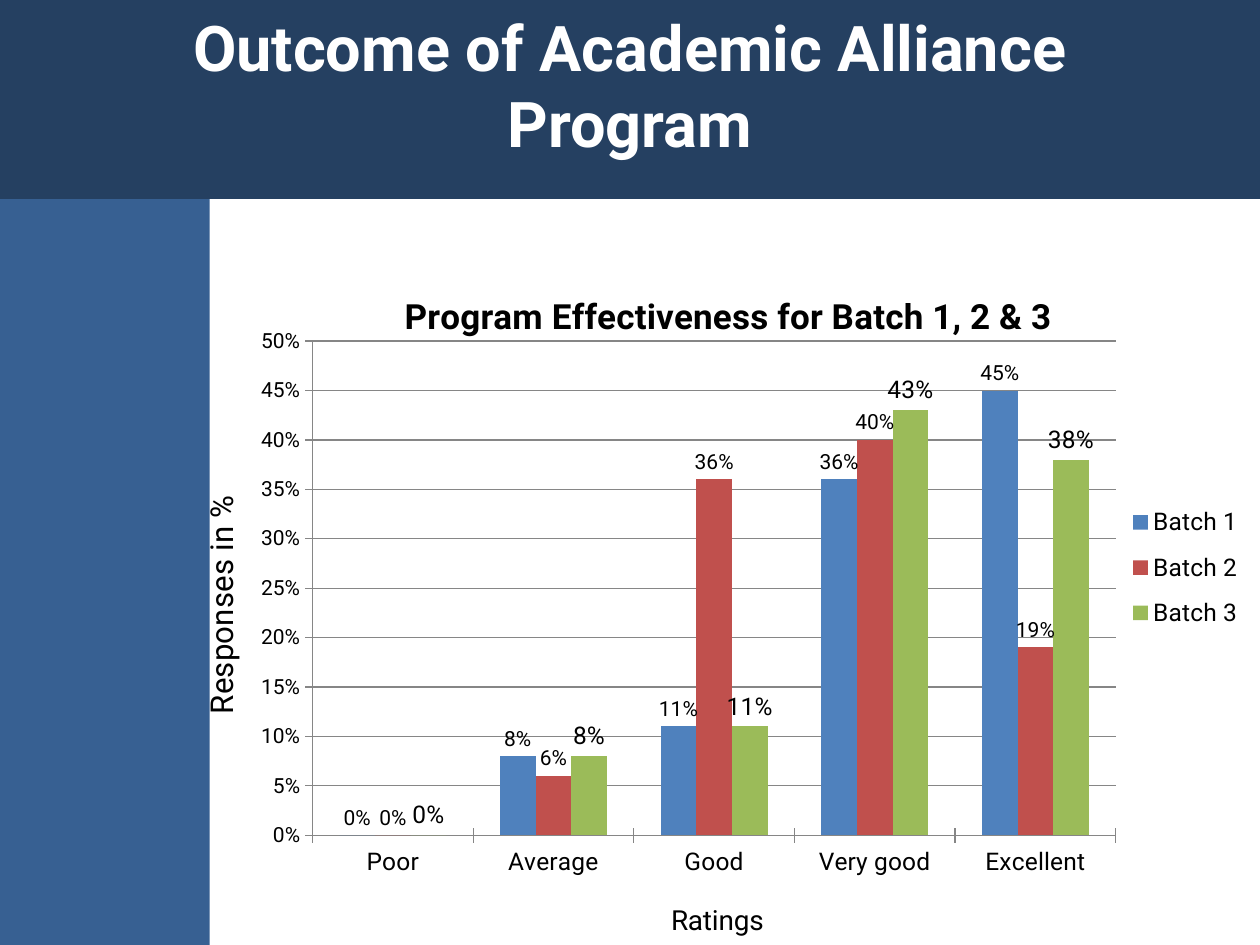
from dataclasses import dataclass

from lxml import etree
from pptx import Presentation
from pptx.chart.data import CategoryChartData
from pptx.dml.color import RGBColor
from pptx.enum.chart import (XL_CHART_TYPE, XL_LABEL_POSITION,
                             XL_LEGEND_POSITION, XL_TICK_MARK)
from pptx.enum.shapes import MSO_SHAPE
from pptx.enum.text import MSO_ANCHOR, MSO_AUTO_SIZE, PP_ALIGN
from pptx.oxml.ns import qn
from pptx.util import Cm, Pt

COLUMNS = XL_CHART_TYPE.COLUMN_CLUSTERED
OUTSIDE_END = XL_LABEL_POSITION.OUTSIDE_END
LEGEND_RIGHT = XL_LEGEND_POSITION.RIGHT
CROSS = XL_TICK_MARK.CROSS
RECT = MSO_SHAPE.RECTANGLE

NAVY = RGBColor(0x25, 0x40, 0x61)
STEEL = RGBColor(0x37, 0x60, 0x92)
BLUE = RGBColor(0x4F, 0x81, 0xBD)
RED = RGBColor(0xC0, 0x50, 0x4D)
GREEN = RGBColor(0x9B, 0xBB, 0x59)
GREY = RGBColor(0x86, 0x86, 0x86)
BLACK = RGBColor(0, 0, 0)
WHITE = RGBColor(0xFF, 0xFF, 0xFF)
FONT = "Roboto"
PERCENT = "0%"


@dataclass
class Band:
    left: float
    top: float
    width: float
    height: float
    color: RGBColor


@dataclass
class Batch:
    name: str
    values: tuple
    color: RGBColor
    label_size: int


BANDS = [Band(0, 4.01, 4.23, 15.04, STEEL), Band(0, 0, 25.4, 4.01, NAVY)]
RATINGS = ["Poor", "Average", "Good", "Very good", "Excellent"]
BATCHES = [
    Batch("Batch 1", (0, 0.08, 0.11, 0.36, 0.45), BLUE, 12),
    Batch("Batch 2", (0, 0.06, 0.36, 0.40, 0.19), RED, 12),
    Batch("Batch 3", (0, 0.08, 0.11, 0.43, 0.38), GREEN, 14),
]


def format_font(font, size: int, color: RGBColor = BLACK, bold: bool = False) -> None:
    font.name, font.size, font.bold = FONT, Pt(size), bold
    font.color.rgb = color


def write(tf, text: str, *, size: int, color: RGBColor = BLACK,
          bold: bool = False) -> None:
    p = tf.paragraphs[0]
    p.alignment = PP_ALIGN.CENTER
    r = p.add_run()
    r.text = text
    format_font(r.font, size, color, bold)


def place(element, index: int, **fractions: float) -> None:
    """Set a manual layout, in fractions of the chart, at a child index."""
    for old in element.findall(qn("c:layout")):
        element.remove(old)
    layout = etree.Element(qn("c:layout"))
    manual = etree.SubElement(layout, qn("c:manualLayout"))
    if "w" in fractions and element.tag == qn("c:plotArea"):
        etree.SubElement(manual, qn("c:layoutTarget"), val="inner")
    for key in ("x", "y"):
        etree.SubElement(manual, qn(f"c:{key}Mode"), val="edge")
    for key, value in fractions.items():
        etree.SubElement(manual, qn(f"c:{key}"), val=str(value))
    element.insert(index, layout)


def add_band(s, band: Band, index: int) -> None:
    sp = s.shapes.add_shape(RECT, Cm(band.left), Cm(band.top),
                            Cm(band.width), Cm(band.height))
    sp.shadow.inherit = False
    sp.fill.solid()
    sp.fill.fore_color.rgb = band.color
    sp.line.fill.background()
    s.shapes._spTree.insert(2 + index, sp._element)  # behind the title


def add_title(s, text: str) -> None:
    sp = s.shapes.title
    sp.left, sp.top, sp.width, sp.height = Cm(1.27), Cm(0.64), Cm(22.86), Cm(2.11)
    tf = sp.text_frame
    tf.word_wrap = True
    tf.auto_size = MSO_AUTO_SIZE.NONE
    tf.vertical_anchor = MSO_ANCHOR.MIDDLE
    write(tf, text, size=36, color=WHITE, bold=True)


def format_axis(axis, title: str, title_size: int, size: int,
                x: float, y: float) -> None:
    write(axis.axis_title.text_frame, title, size=title_size)
    place(axis.axis_title._element, 1, x=x, y=y)
    format_font(axis.tick_labels.font, size)
    axis.major_tick_mark = CROSS
    axis.minor_tick_mark = XL_TICK_MARK.NONE
    axis.format.line.color.rgb = GREY


def add_chart(s) -> None:
    data = CategoryChartData(number_format=PERCENT)
    data.categories = RATINGS
    for batch in BATCHES:
        data.add_series(batch.name, batch.values)
    chart = s.shapes.add_chart(COLUMNS, Cm(3.71), Cm(5.08),
                               Cm(21.59), Cm(13.97), data).chart
    format_font(chart.font, 10)

    # Title and legend
    chart.has_title = True
    write(chart.chart_title.text_frame, "Program Effectiveness for Batch 1, 2 & 3",
          size=20, bold=True)
    place(chart.chart_title._element, 1, x=0.2, y=0.05)
    chart.has_legend = True
    chart.legend.position = LEGEND_RIGHT
    chart.legend.include_in_layout = False
    format_font(chart.legend.font, 14)
    place(chart.legend._element, 1, x=0.87, y=0.35, w=0.13, h=0.22)

    # Axes
    format_axis(chart.category_axis, "Ratings", 16, 14, 0.45, 0.94)
    axis = chart.value_axis
    format_axis(axis, "Responses in %", 18, 12, 0.01, 0.35)
    axis.minimum_scale, axis.maximum_scale, axis.major_unit = 0, 0.5, 0.05
    axis.tick_labels.number_format = PERCENT
    axis.tick_labels.number_format_is_linked = False
    axis.has_major_gridlines = True
    axis.major_gridlines.format.line.color.rgb = GREY

    # Columns and their labels
    plot = chart.plots[0]
    plot.gap_width, plot.overlap = 150, 0
    plot.vary_by_categories = False
    place(plot._element.getparent(), 0, x=0.12, y=0.13, w=0.75, h=0.72)
    for series, batch in zip(plot.series, BATCHES):
        series.format.fill.solid()
        series.format.fill.fore_color.rgb = batch.color
        labels = series.data_labels
        labels.show_value = True
        labels.position = OUTSIDE_END
        labels.number_format = PERCENT
        labels.number_format_is_linked = False
        format_font(labels.font, batch.label_size)


def main() -> None:
    prs = Presentation()
    prs.slide_width, prs.slide_height = Cm(25.4), Cm(19.05)
    s = prs.slides.add_slide(prs.slide_layouts[5])
    for index, band in enumerate(BANDS):
        add_band(s, band, index)
    add_title(s, "Outcome of Academic Alliance Program")
    add_chart(s)
    prs.save("out.pptx")


if __name__ == "__main__":
    main()
